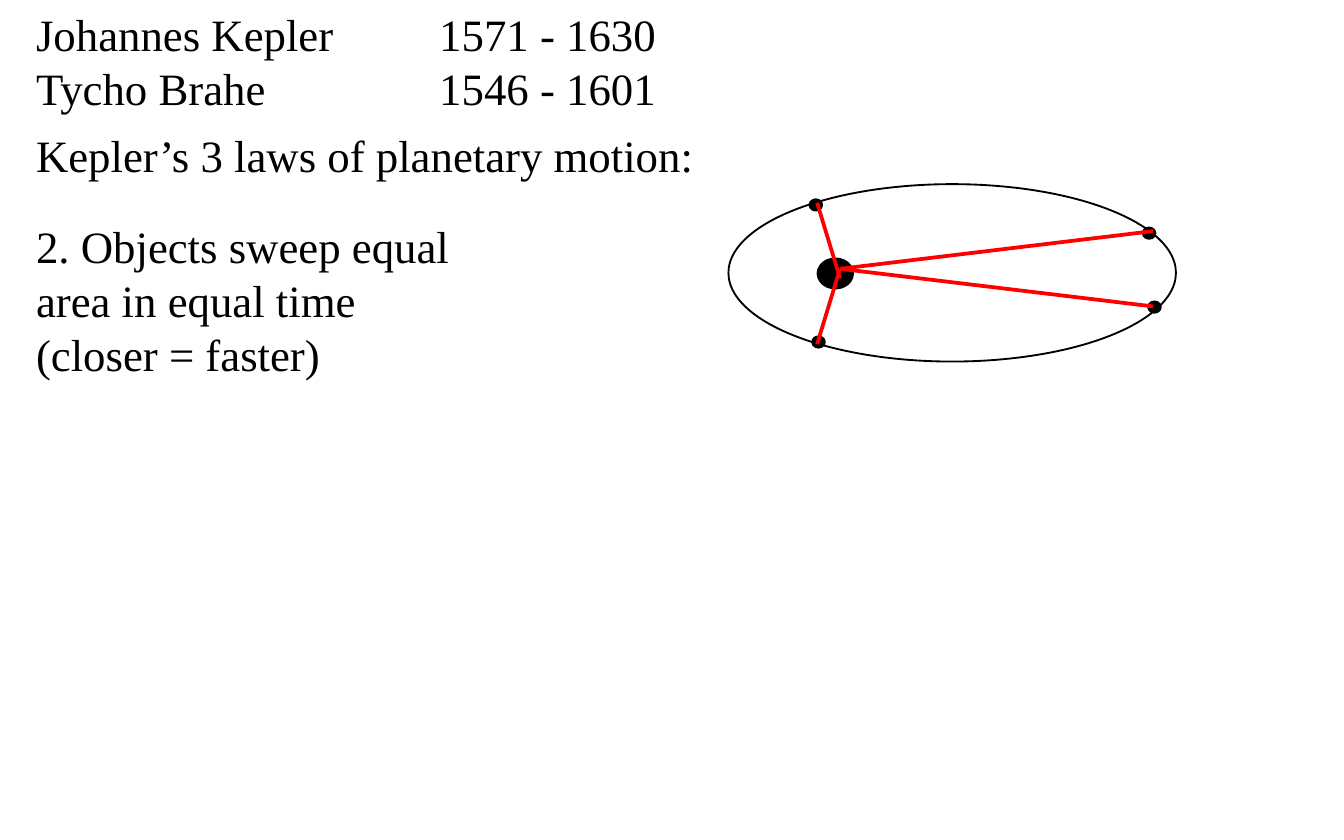
from lxml.etree import SubElement
from pptx import Presentation
from pptx.dml.color import RGBColor
from pptx.enum.shapes import MSO_CONNECTOR as CONN, MSO_SHAPE as SHAPE
from pptx.oxml.ns import qn
from pptx.util import Inches, Pt

FONT, SIZE = "Times New Roman", 24
BLACK, RED = "000000", "FF0000"
LEFT, DATE_TAB = 0.17, 3

TEXTS = [
    (0, 4.86, 0.91, ["Johannes Kepler\t1571 - 1630", "Tycho Brahe\t1546 - 1601"]),
    (0.9, 5.14, 0.5, ["Kepler’s 3 laws of planetary motion:"]),
    (1.58, 3.39, 1.31, ["2. Objects sweep equal", "area in equal time", "(closer = faster)"]),
]

ORBIT = (5.42, 1.37, 3.33, 1.32)
SUN = (6.09, 1.93, 0.25, 0.21)
PLANET_SIZE = (0.08, 0.07)
PLANETS = [(8.55, 2.25), (8.51, 1.7), (6.05, 2.51), (6.03, 1.49)]
RADII = [
    ((6.08, 1.51), (6.25, 2.07)),
    ((6.25, 2), (6.08, 2.56)),
    ((8.58, 1.72), (6.25, 2)),
    ((8.58, 2.28), (6.25, 2)),
]


def rgb(value):
    return RGBColor.from_string(value)


def set_line(sp, color, width):
    sp.line.color.rgb = rgb(color)
    sp.line.width = Pt(width)


def add_text(slide, top, width, height, lines):
    box = slide.shapes.add_textbox(*map(Inches, (LEFT, top, width, height)))
    tf = box.text_frame
    tf.word_wrap = False
    tf.text = "\n".join(lines)
    for p in tf.paragraphs:
        if "\t" in p.text:
            tabs = SubElement(p._p.get_or_add_pPr(), qn("a:tabLst"))
            SubElement(tabs, qn("a:tab"), pos=str(Inches(DATE_TAB)), algn="l")
        p.font.name, p.font.size = FONT, Pt(SIZE)
        p.font.color.rgb = rgb(BLACK)


def add_ellipse(slide, bounds, width, fill=None):
    sp = slide.shapes.add_shape(SHAPE.OVAL, *map(Inches, bounds))
    sp.shadow.inherit = False
    if fill:
        sp.fill.solid()
        sp.fill.fore_color.rgb = rgb(fill)
    else:
        sp.fill.background()
    set_line(sp, BLACK, width)


def add_radius(slide, start, end):
    sp = slide.shapes.add_connector(CONN.STRAIGHT, *map(Inches, start + end))
    set_line(sp, RED, 2)
    SubElement(sp._element.spPr, qn("a:effectLst"))


prs = Presentation()
prs.slide_width, prs.slide_height = Inches(10), Inches(6.25)
slide = prs.slides.add_slide(prs.slide_layouts[6])

for text in TEXTS:
    add_text(slide, *text)
add_ellipse(slide, ORBIT, 1)
for body in [SUN] + [planet + PLANET_SIZE for planet in PLANETS]:
    add_ellipse(slide, body, 2, BLACK)
for start, end in RADII:
    add_radius(slide, start, end)

prs.save("out.pptx")
